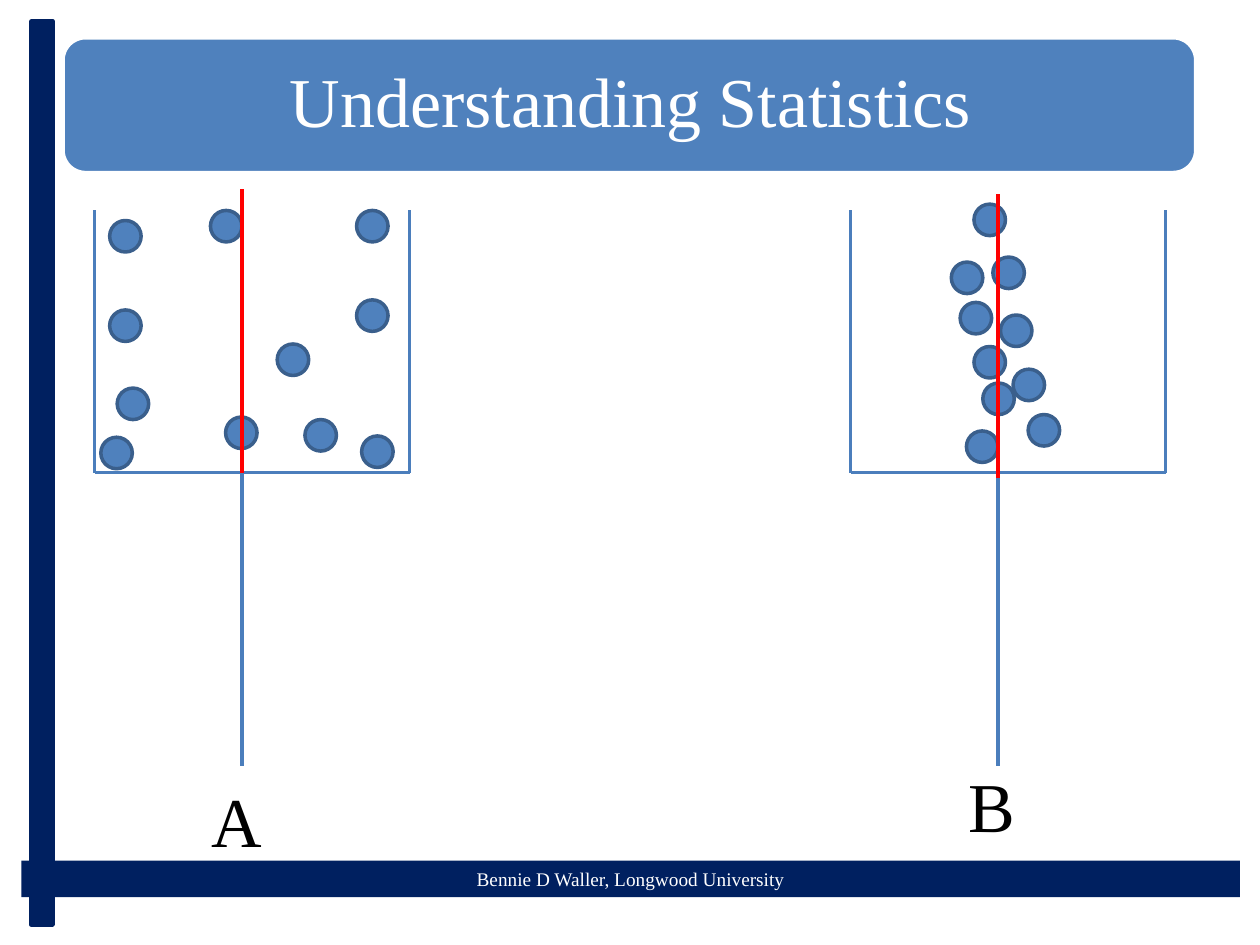
from dataclasses import dataclass

from lxml.etree import SubElement
from pptx import Presentation
from pptx.dml.color import RGBColor
from pptx.enum.shapes import MSO_CONNECTOR, MSO_SHAPE
from pptx.enum.text import MSO_ANCHOR, PP_ALIGN
from pptx.oxml.ns import qn
from pptx.util import Inches, Pt

COLORS = {
    "navy": "002060",
    "blue": "4F81BD",
    "ball edge": "3A5F8C",
    "cup line": "4B7EBC",
    "mean line": "FF0000",
    "white": "FFFFFF",
    "black": "000000",
}
FONT = "Times New Roman"
BALL_SIZE = 0.25
CUP_TOP, CUP_BOTTOM, STEM_BOTTOM = 1.67, 3.75, 6.08
CUP_WIDTH, STEM_OFFSET, MEAN_HEIGHT = 2.5, 1.17, 2.25


@dataclass(frozen=True)
class Cup:
    label: str
    left: float
    label_left: float
    label_top: float
    mean_bottom: float
    balls: tuple[tuple[float, float], ...]


CUPS = (
    Cup("A", 0.75, 1.58, 6.12, 3.75, (
        (0.87, 1.75), (0.93, 3.08), (2.2, 2.73), (2.83, 2.38),
        (1.67, 1.67), (0.8, 3.47), (0.87, 2.46), (1.79, 3.31),
        (2.42, 3.33), (2.87, 3.46), (2.83, 1.67),
    )),
    Cup("B", 6.75, 7.59, 6, 3.79, (
        (7.73, 1.62), (7.55, 2.08), (7.88, 2.04), (7.62, 2.4),
        (7.94, 2.5), (7.73, 2.75), (7.8, 3.04), (8.04, 2.93),
        (7.67, 3.42), (8.16, 3.29),
    )),
)


def rgb(name: str) -> RGBColor:
    return RGBColor.from_string(COLORS[name])


def add_filled_shape(slide, kind, left: float, top: float, width: float, height: float,
                     fill: str, edge: str | None = None, edge_width: float = 2):
    shape = slide.shapes.add_shape(
        kind, Inches(left), Inches(top), Inches(width), Inches(height))
    shape.shadow.inherit = False
    shape.fill.solid()
    shape.fill.fore_color.rgb = rgb(fill)
    if edge:
        shape.line.color.rgb = rgb(edge)
        shape.line.width = Pt(edge_width)
    else:
        shape.line.fill.background()
    return shape


def add_line(slide, start: tuple[float, float], end: tuple[float, float], color: str) -> None:
    line = slide.shapes.add_connector(
        MSO_CONNECTOR.STRAIGHT, *(Inches(value) for value in start + end))
    line.line.color.rgb = rgb(color)
    line.line.width = Pt(2)
    SubElement(line._element.spPr, qn("a:effectLst"))


def write_text(shape, text: str, size: float, color: str, alignment: PP_ALIGN) -> None:
    shape.text_frame.text = text
    paragraph = shape.text_frame.paragraphs[0]
    paragraph.alignment = alignment
    font = paragraph.runs[0].font
    font.name = FONT
    font.size = Pt(size)
    font.color.rgb = rgb(color)


def add_frame(slide) -> None:
    """Draw the footer bar and the bar down the left side."""
    footer = add_filled_shape(slide, MSO_SHAPE.RECTANGLE, 0.17, 6.83, 9.67, 0.29, "navy")
    write_text(footer, "Bennie D Waller, Longwood University", 11, "white", PP_ALIGN.CENTER)
    add_filled_shape(slide, MSO_SHAPE.RECTANGLE, 0.25, 0.17, 0.17, 7.17, "navy", "navy", 2.5)


def add_title(slide) -> None:
    add_filled_shape(slide, MSO_SHAPE.ROUNDED_RECTANGLE,
                     0.5, 0.3, 8.99, 1.07, "blue", "white")
    title = slide.shapes.title
    title.left, title.top = Inches(0.56), Inches(0.35)
    title.width, title.height = Inches(8.89), Inches(0.97)
    write_text(title, "Understanding Statistics", 40, "white", PP_ALIGN.CENTER)
    frame = title.text_frame
    frame.word_wrap = True
    frame.vertical_anchor = MSO_ANCHOR.MIDDLE
    frame.margin_left = frame.margin_right = Inches(0.17)
    frame.margin_top = frame.margin_bottom = Inches(0.08)
    frame.paragraphs[0].line_spacing = 0.9
    # Bring the title in front of its banner
    slide.shapes._spTree.append(title._element)


def add_cup(slide, cup: Cup) -> None:
    right = cup.left + CUP_WIDTH
    stem = cup.left + STEM_OFFSET
    for x, top, bottom in ((cup.left, CUP_TOP, CUP_BOTTOM),
                           (right, CUP_TOP, CUP_BOTTOM),
                           (stem, CUP_BOTTOM, STEM_BOTTOM)):
        add_line(slide, (x, top), (x, bottom), "cup line")
    add_line(slide, (cup.left, CUP_BOTTOM), (right, CUP_BOTTOM), "cup line")
    for left, top in cup.balls:
        add_filled_shape(slide, MSO_SHAPE.FLOWCHART_CONNECTOR, left, top,
                         BALL_SIZE, BALL_SIZE, "blue", "ball edge")
    label = slide.shapes.add_textbox(
        Inches(cup.label_left), Inches(cup.label_top), Inches(0.53), Inches(0.77))
    label.text_frame.word_wrap = True
    write_text(label, cup.label, 40, "black", PP_ALIGN.LEFT)
    add_line(slide, (stem, cup.mean_bottom), (stem, cup.mean_bottom - MEAN_HEIGHT), "mean line")


def main() -> None:
    presentation = Presentation()
    presentation.slide_width = Inches(10)
    presentation.slide_height = Inches(7.5)
    slide = presentation.slides.add_slide(presentation.slide_layouts.get_by_name("Title Only"))
    add_frame(slide)
    add_title(slide)
    for cup in CUPS:
        add_cup(slide, cup)
    presentation.save("out.pptx")


if __name__ == "__main__":
    main()
